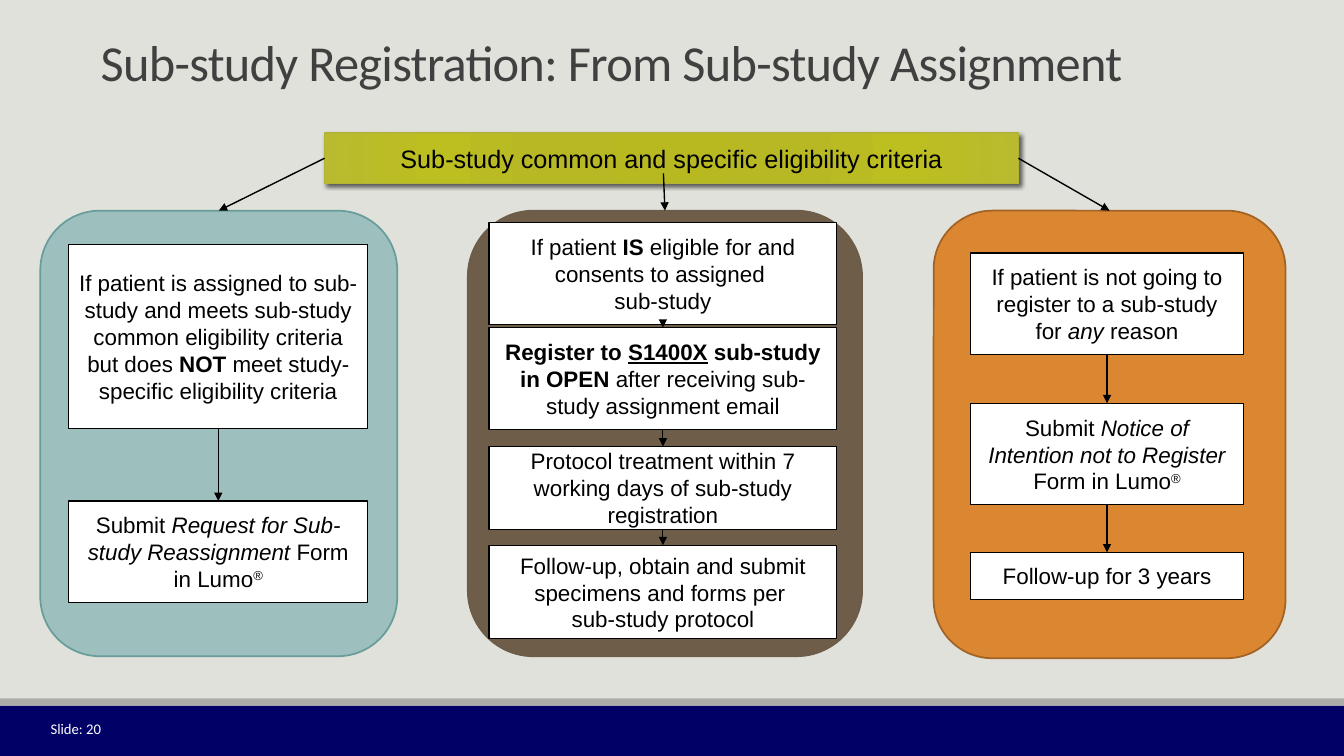
from lxml import etree
from pptx import Presentation
from pptx.dml.color import RGBColor
from pptx.enum.shapes import MSO_CONNECTOR, MSO_SHAPE
from pptx.enum.text import MSO_ANCHOR, PP_ALIGN
from pptx.oxml import parse_xml
from pptx.oxml.ns import qn
from pptx.util import Inches, Pt

RECTANGLE, ROUNDED = MSO_SHAPE.RECTANGLE, MSO_SHAPE.ROUNDED_RECTANGLE
STRAIGHT = MSO_CONNECTOR.STRAIGHT
MIDDLE, BOTTOM = MSO_ANCHOR.MIDDLE, MSO_ANCHOR.BOTTOM
LEFT, CENTER, RIGHT = PP_ALIGN.LEFT, PP_ALIGN.CENTER, PP_ALIGN.RIGHT
SIDE_TOP, SIDE_LEFT, SIDE_BOTTOM, SIDE_RIGHT = range(4)

THEME = {
    "background": "E1E1DB", "footer": "000066", "stripe": "ACADA8",
    "title": "404040", "white": "FFFFFF", "black": "000000",
    "banner_line": "B3B435",
    "banner_stops": [(0, "B8B920"), (34, "B7B823"), (70, "BDBE20"), (100, "B9BA2F")],
    "teal": ("9DBFBE", "689D9B"), "brown": ("6E5D49", "6C5C48"),
    "orange": ("DB8631", "A26324"),
    "heading_font": "Calibri", "body_font": "Arial",
    "title_size": 36, "banner_size": 18, "card_size": 16, "number_size": 10.5,
}
DRAWING = "http://schemas.openxmlformats.org/drawingml/2006/main"


def add_box(shapes, kind, place, fill=None, line=None, width=0.75):
    box = shapes.add_shape(kind, *map(Inches, place))
    box.shadow.inherit = False
    if fill:
        box.fill.solid()
        box.fill.fore_color.rgb = RGBColor.from_string(fill)
    if line:
        box.line.color.rgb = RGBColor.from_string(line)
        box.line.width = Pt(width)
    else:
        box.line.fill.background()
    return box


def add_arrow(shapes, start, end, width):
    arrow = shapes.add_connector(STRAIGHT, *map(Inches, (6.58, 1.72, 6.6, 2.09)))
    if start:
        arrow.begin_connect(*start)
    arrow.end_connect(*end)
    arrow.line.color.rgb = RGBColor.from_string(THEME["black"])
    arrow.line.width = Pt(width)
    etree.SubElement(arrow.line._get_or_add_ln(), qn("a:tailEnd"), type="triangle")
    etree.SubElement(arrow._element.spPr, qn("a:effectLst"))


deck = Presentation()
deck.slide_width, deck.slide_height = Inches(13.33), Inches(7.5)
page = deck.slides.add_slide(deck.slide_layouts[6])
page.background.fill.solid()
page.background.fill.fore_color.rgb = RGBColor.from_string(THEME["background"])

add_box(page.shapes, RECTANGLE, (0, 7, 13.33, 0.5), THEME["footer"])
add_box(page.shapes, RECTANGLE, (0, 6.93, 13.33, 0.07), THEME["stripe"])

headings = [
    ("Slide: 20", (0.07, 7.03, 1.03, 0.4), MIDDLE, RIGHT, "number_size", "white"),
    ("Sub-study Registration: From Sub-study Assignment",
     (0.9, 0.14, 11.53, 0.82), BOTTOM, LEFT, "title_size", "title"),
]
for text, place, anchor, alignment, size, color in headings:
    box = page.shapes.add_textbox(*map(Inches, place))
    frame = box.text_frame
    frame.text = text
    frame.word_wrap = True
    frame.vertical_anchor = anchor
    para = frame.paragraphs[0]
    para.alignment = alignment
    span = para.runs[0]
    span.font.name = THEME["heading_font"]
    span.font.size = Pt(THEME[size])
    span.font.color.rgb = RGBColor.from_string(THEME[color])
para.line_spacing = 0.85
span.font._element.set("spc", "-50")

banner = add_box(page.shapes, RECTANGLE, (3.22, 1.32, 6.88, 0.5),
                 line=THEME["banner_line"], width=1)
stops = "".join(f'<a:gs pos="{position * 1000}"><a:srgbClr val="{color}"/></a:gs>'
                for position, color in THEME["banner_stops"])
banner._element.spPr.insert(2, parse_xml(
    f'<a:gradFill xmlns:a="{DRAWING}" rotWithShape="1"><a:gsLst>{stops}</a:gsLst>'
    '<a:path path="circle"><a:fillToRect l="100000" t="100000" r="100000" b="100000"/>'
    '</a:path></a:gradFill>'))
banner._element.spPr.find(qn("a:effectLst")).append(parse_xml(
    f'<a:outerShdw xmlns:a="{DRAWING}" blurRad="{Pt(3)}" dist="{Pt(2)}" dir="2700000">'
    f'<a:srgbClr val="{THEME["black"]}"><a:alpha val="60000"/></a:srgbClr></a:outerShdw>'))
banner.text_frame.text = "Sub-study common and specific eligibility criteria"
banner.text_frame.word_wrap = True
banner.text_frame.vertical_anchor = MIDDLE
banner.text_frame.paragraphs[0].alignment = CENTER
banner_font = banner.text_frame.paragraphs[0].runs[0].font
banner_font.name = THEME["body_font"]
banner_font.size = Pt(THEME["banner_size"])
banner_font.color.rgb = RGBColor.from_string(THEME["black"])

panels = [
    ("orange", (9.26, 2.09, 3.49, 4.44), 9.63, 2.7, 1, (banner, SIDE_RIGHT), [
        (2.51, 1.01, [[("If patient is not going to register to a sub-study for ", ""),
                       ("any", "i"), (" reason", "")]]),
        (4, 1.01, [[("Submit ", ""), ("Notice of Intention not to Register", "i"),
                    (" Form in Lumo", ""), ("®", "^")]]),
        (5.48, 0.47, [[("Follow-up for 3 years", "")]]),
    ]),
    ("teal", (0.4, 2.09, 3.54, 4.42), 0.68, 2.97, 1, (banner, SIDE_LEFT), [
        (2.43, 1.82, [[("If patient is assigned to sub-study and meets sub-study "
                        "common eligibility criteria but does ", ""), ("NOT", "b"),
                       (" meet study-specific eligibility criteria", "")]]),
        (4.97, 1.01, [[("Submit ", ""), ("Request for Sub-study Reassignment", "i"),
                       (" Form in Lumo", ""), ("®", "^")]]),
    ]),
    ("brown", (4.64, 2.09, 3.91, 4.42), 4.85, 3.45, 0.75, None, [
        (2.21, 1.01, [[("If patient ", ""), ("IS", "b"),
                       (" eligible for and consents to assigned ", ""),
                       ("\n", ""), ("sub-study", "")]]),
        (3.25, 1.01, [[("Register to ", "b"), ("S1400X", "bu"),
                       (" sub-study in OPEN ", "b"),
                       ("after receiving sub-study assignment email", "")]]),
        (4.43, 0.82, [[("Protocol treatment within 7 working days of "
                        "sub-study registration", "")]]),
        (5.41, 0.93, [[("Follow-up, obtain and submit specimens and forms per ", "")],
                      [("sub-study protocol", "")]]),
    ]),
]

for color, place, left, width, arrow_width, source, cards in panels:
    shapes = page.shapes.add_group_shape().shapes
    panel = add_box(shapes, ROUNDED, place, *THEME[color], 1.25)
    boxes = []
    for top, height, paragraphs in cards:
        card = add_box(shapes, RECTANGLE, (left, top, width, height),
                       THEME["white"], THEME["black"])
        frame = card.text_frame
        frame.word_wrap = True
        frame.vertical_anchor = MIDDLE
        for index, spans in enumerate(paragraphs):
            para = frame.add_paragraph() if index else frame.paragraphs[0]
            para.alignment = CENTER
            for text, style in spans:
                if text == "\n":
                    para.add_line_break()
                    continue
                span = para.add_run()
                span.text = text
                span.font.name = THEME["body_font"]
                span.font.size = Pt(THEME["card_size"])
                span.font.color.rgb = RGBColor.from_string(THEME["black"])
                span.font.bold = "b" in style
                span.font.italic = "i" in style
                span.font.underline = "u" in style
                if "^" in style:
                    span.font._element.set("baseline", "30000")
        boxes.append(card)
    for upper, lower in zip(boxes, boxes[1:]):
        add_arrow(shapes, (upper, SIDE_BOTTOM), (lower, SIDE_TOP), arrow_width)
    add_arrow(page.shapes, source, (panel, SIDE_TOP), 1)

deck.save("out.pptx")
